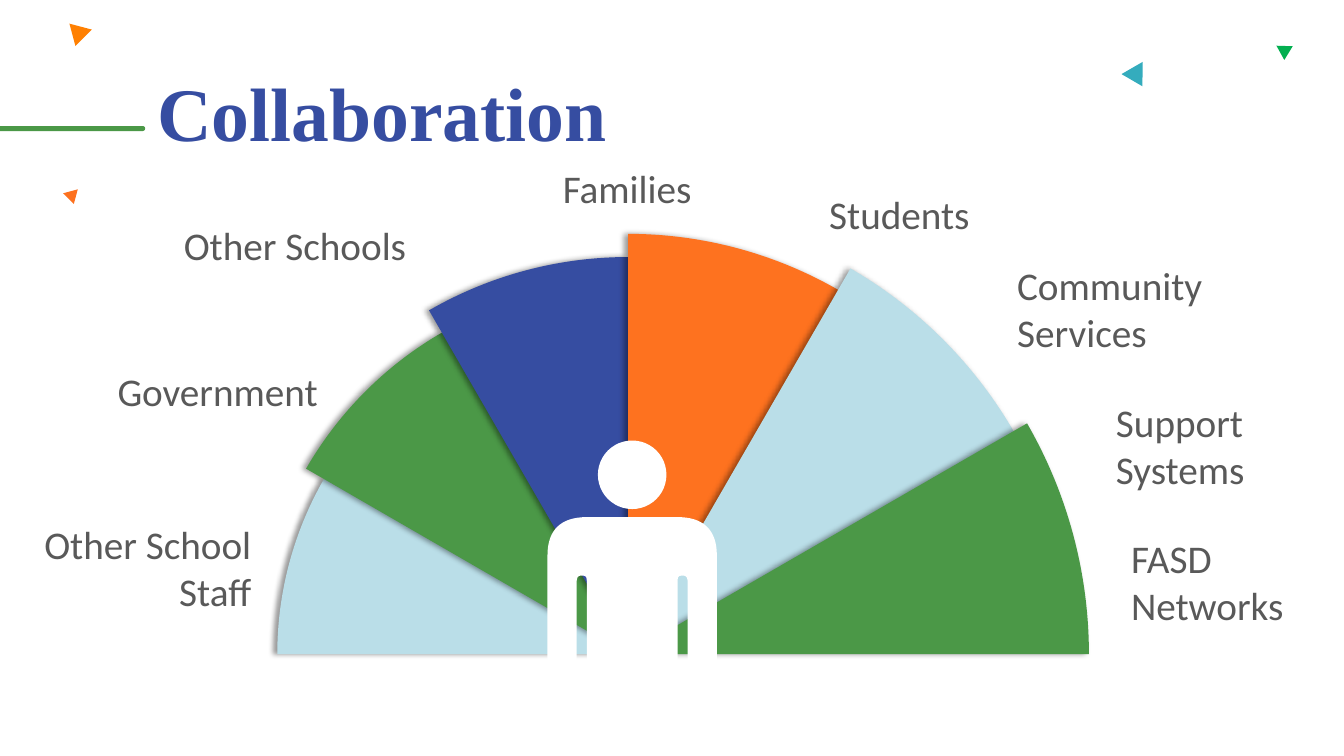
import math
from typing import NamedTuple

from lxml import etree
from pptx import Presentation
from pptx import util as u
from pptx.dml.color import RGBColor
from pptx.enum import shapes, text
from pptx.oxml import ns

GREEN = RGBColor(0x4B, 0x98, 0x47)
BLUE = RGBColor(0x36, 0x4D, 0xA1)
ORANGE = RGBColor(0xFE, 0x72, 0x1F)
PALE = RGBColor(0xBA, 0xDE, 0xE8)
WHITE = RGBColor(0xFF, 0xFF, 0xFF)
GREY = RGBColor(0x59, 0x59, 0x59)
AMBER = RGBColor(0xFF, 0x80, 0x01)
CORAL = RGBColor(0xFD, 0x71, 0x1E)
EMERALD = RGBColor(0x03, 0xAF, 0x50)
TEAL = RGBColor(0x34, 0xAC, 0xBD)

LEFT, CENTER, RIGHT = text.PP_ALIGN.LEFT, text.PP_ALIGN.CENTER, text.PP_ALIGN.RIGHT
Point = tuple[float, float]
Segment = list[Point]


class Partner(NamedTuple):
    name: str
    left: float
    top: float
    width: float
    height: float
    align: text.PP_ALIGN


class Wedge(NamedTuple):
    tip: Point
    radius: float
    color: RGBColor


class Confetti(NamedTuple):
    left: float
    top: float
    width: float
    height: float
    rotation: float
    color: RGBColor


PARTNERS = [
    Partner("Families", 5.22, 1.58, 2, 0.57, CENTER),
    Partner("Students", 7.92, 1.84, 2, 0.57, CENTER),
    Partner("Community Services", 9.99, 2.54, 3.23, 1.04, LEFT),
    Partner("Support Systems", 10.97, 3.9, 2.4, 1.04, LEFT),
    Partner("FASD Networks", 11.12, 5.25, 2.1, 1.04, LEFT),
    Partner("Other School Staff", 0.32, 5.11, 2.27, 1.04, RIGHT),
    Partner("Government", -0.34, 3.59, 3.59, 0.57, RIGHT),
    Partner("Other Schools", 1.13, 2.15, 3.59, 0.57, CENTER),
]
WEDGES = [
    Wedge((6.24, 6.49), 3.49, PALE),
    Wedge((6.24, 6.5), 3.7, GREEN),
    Wedge((6.23, 6.5), 3.95, BLUE),
    Wedge((6.23, 6.5), 4.18, ORANGE),
    Wedge((6.22, 6.5), 4.43, PALE),
    Wedge((6.22, 6.49), 4.58, GREEN),
]
CONFETTI = [
    Confetti(0.7, 0.22, 0.23, 0.2, 75, AMBER),
    Confetti(0.65, 1.86, 0.15, 0.13, 45, CORAL),
    Confetti(12.64, 0.42, 0.16, 0.14, 301.5, EMERALD),
    Confetti(11.16, 0.6, 0.24, 0.21, 30.2, TEAL),
]
FAN_STEP = math.radians(30)
BODY_AXIS = 6.27
BODY_START = (5.82, 5.13)
BODY_LEFT_HALF = [
    [(5.57, 5.13), (5.43, 5.25), (5.43, 5.51)],
    [(5.43, 6.67)],
    [(5.43, 6.74), (5.49, 6.8), (5.59, 6.8)],
    [(5.66, 6.8), (5.72, 6.74), (5.72, 6.67)],
    [(5.72, 5.76)],
    [(5.72, 5.71), (5.76, 5.71), (5.76, 5.71)],
    [(5.8, 5.71), (5.82, 5.71), (5.82, 5.76)],
    [(5.82, 8.4)],
    [(5.82, 8.49), (5.91, 8.61), (6.01, 8.61)],
    [(6.11, 8.61), (6.18, 8.49), (6.18, 8.4)],
    [(6.18, 7.07)],
    [(6.18, 6.99), (6.2, 6.99), (BODY_AXIS, 6.99)],
]


def paint(shape, color: RGBColor) -> None:
    shape.shadow.inherit = False
    shape.fill.solid()
    shape.fill.fore_color.rgb = color
    shape.line.fill.background()


def add_left_shadow(shape) -> None:
    effects = shape.element.spPr.find(ns.qn("a:effectLst"))
    shadow = etree.SubElement(
        effects, ns.qn("a:outerShdw"), blurRad=str(u.Pt(4)), dist=str(u.Pt(3)),
        dir="10800000", algn="r", rotWithShape="0")
    black = etree.SubElement(shadow, ns.qn("a:srgbClr"), val="000000")
    etree.SubElement(black, ns.qn("a:alpha"), val="40000")


def add_outline(group, start: Point, segments: list[Segment], color: RGBColor):
    builder = group.shapes.build_freeform(*map(u.Inches, start))
    builder.add_line_segments(
        [(u.Inches(x), u.Inches(y)) for segment in segments for x, y in segment],
        close=True)
    outline = builder.convert_to_shape()
    steps = iter(list(outline.element.iter(ns.qn("a:lnTo"))))
    for segment in segments:
        lines = [next(steps) for _ in segment]
        if len(lines) == 3:
            curve = etree.Element(ns.qn("a:cubicBezTo"))
            lines[0].addprevious(curve)
            for line in lines:
                curve.append(line[0])
                line.getparent().remove(line)
    paint(outline, color)
    return outline


def add_preset(parent, kind, left: float, top: float, width: float,
               height: float, color: RGBColor, rotation: float = 0):
    preset = parent.shapes.add_shape(
        kind, *map(u.Inches, (left, top, width, height)))
    preset.rotation = rotation
    paint(preset, color)
    return preset


def format_text(frame, align, font_name: str, size: int, color: RGBColor, bold: bool) -> None:
    frame.word_wrap = True
    paragraph = frame.paragraphs[0]
    paragraph.alignment = align
    font = paragraph.runs[0].font
    font.name, font.size, font.bold = font_name, u.Pt(size), bold
    font.color.rgb = color


def add_title(slide) -> None:
    title = slide.shapes.title
    title.left, title.top, title.width, title.height = map(
        u.Inches, (1.46, 0.59, 6.03, 1.01))
    frame = title.text_frame
    frame.text = "Collaboration"
    frame.auto_size = text.MSO_AUTO_SIZE.NONE
    frame.vertical_anchor = text.MSO_ANCHOR.BOTTOM
    format_text(frame, LEFT, "Times New Roman", 54, BLUE, True)


def add_partner(slide, partner: Partner) -> None:
    label = slide.shapes.add_textbox(*map(u.Inches, partner[1:5]))
    label.text_frame.text = partner.name
    format_text(label.text_frame, partner.align, "Calibri", 28, GREY, False)


def add_fan(slide) -> None:
    fan = slide.shapes.add_group_shape()
    reach = 4 / 3 * math.tan(FAN_STEP / 4)
    for index, wedge in enumerate(WEDGES):
        start = math.pi + index * FAN_STEP
        end = start + FAN_STEP

        def on_arc(angle: float, pull: float = 0) -> Point:
            return (wedge.tip[0] + wedge.radius * (math.cos(angle) - pull * math.sin(angle)),
                    wedge.tip[1] + wedge.radius * (math.sin(angle) + pull * math.cos(angle)))

        arc = [on_arc(start, reach), on_arc(end, -reach), on_arc(end)]
        add_left_shadow(add_outline(fan, wedge.tip, [[on_arc(start)], arc], wedge.color))


def add_person(slide) -> None:
    person = slide.shapes.add_group_shape()
    starts = [BODY_START] + [segment[-1] for segment in BODY_LEFT_HALF]
    right_half = [
        [(2 * BODY_AXIS - x, y) for x, y in [*segment[-2::-1], start]]
        for start, segment in reversed(list(zip(starts, BODY_LEFT_HALF)))]
    add_outline(person, BODY_START, BODY_LEFT_HALF + right_half, WHITE)
    add_preset(person, shapes.MSO_SHAPE.OVAL, 5.93, 4.37, 0.68, 0.68, WHITE)


def main() -> None:
    deck = Presentation()
    deck.slide_width, deck.slide_height = u.Inches(13.33), u.Inches(7.5)
    slide = deck.slides.add_slide(deck.slide_layouts[5])
    add_title(slide)
    title_bar = add_preset(slide, shapes.MSO_SHAPE.ROUNDED_RECTANGLE,
                           0.6, 0.46, 0.05, 1.63, GREEN, 90)
    title_bar.adjustments[0] = 0.5
    for partner in PARTNERS:
        add_partner(slide, partner)
    add_fan(slide)
    add_person(slide)
    for piece in CONFETTI:
        add_preset(slide, shapes.MSO_SHAPE.ISOSCELES_TRIANGLE, piece.left, piece.top,
                   piece.width, piece.height, piece.color, piece.rotation)
    deck.save("out.pptx")


if __name__ == "__main__":
    main()
